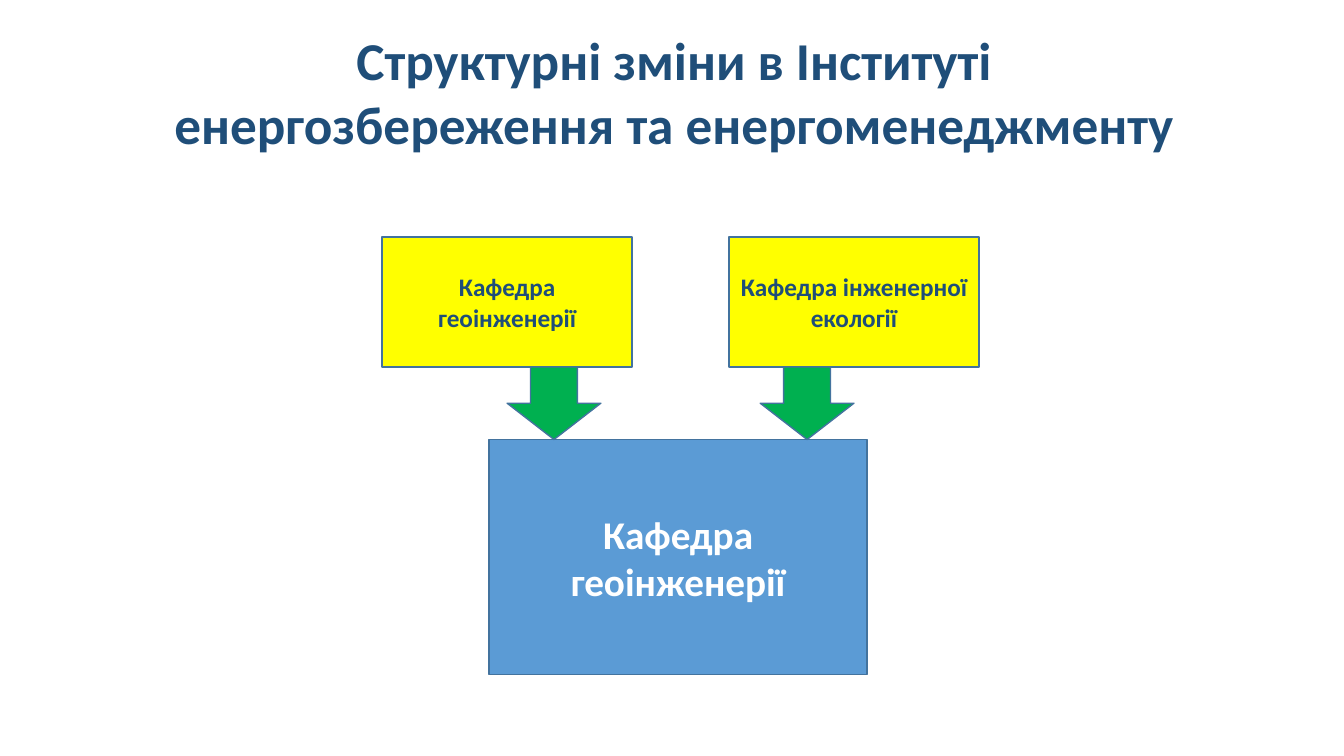
from pptx import Presentation
from pptx.dml.color import RGBColor
from pptx.enum.shapes import MSO_SHAPE
from pptx.enum.text import MSO_ANCHOR, MSO_AUTO_SIZE, PP_ALIGN
from pptx.util import Inches, Pt

# Content
TITLE = ["Структурні зміни в Інституті", "енергозбереження та енергоменеджменту"]
# Each source department: name, box left, arrow left
SOURCES = [
    ("Кафедра геоінженерії", 3.79, 5.03),
    ("Кафедра інженерної екології", 7.23, 7.54),
]
MERGED = "Кафедра геоінженерії"

COLORS = {
    "navy": "1F4E79",
    "outline": "43739E",
    "source": "FFFF00",
    "merged": "5B9BD5",
    "arrow": "00B050",
    "white": "FFFFFF",
}
FONT = "Calibri"

# Rows of the diagram, in inches
SOURCE_TOP, SOURCE_WIDTH, SOURCE_HEIGHT = 2.35, 2.48, 1.29
ARROW_TOP = SOURCE_TOP + SOURCE_HEIGHT
ARROW_WIDTH, ARROW_HEIGHT = 0.93, 0.72
MERGED_TOP = ARROW_TOP + ARROW_HEIGHT


def color(name):
    return RGBColor.from_string(COLORS[name])


def style(para, size, color_name):
    para.alignment = PP_ALIGN.CENTER
    para.font.name = FONT
    para.font.size = Pt(size)
    para.font.bold = True
    para.font.color.rgb = color(color_name)


def add_block(page, kind, left, top, width, height, fill):
    block = page.shapes.add_shape(
        kind, Inches(left), Inches(top), Inches(width), Inches(height))
    block.shadow.inherit = False
    block.fill.solid()
    block.fill.fore_color.rgb = color(fill)
    block.line.color.rgb = color("outline")
    block.line.width = Pt(1)
    return block


def add_department(page, name, left, top, width, height, fill, size, ink):
    box = add_block(page, MSO_SHAPE.RECTANGLE, left, top, width, height, fill)
    frame = box.text_frame
    frame.word_wrap = True
    frame.vertical_anchor = MSO_ANCHOR.MIDDLE
    frame.text = name
    style(frame.paragraphs[0], size, ink)


def main():
    deck = Presentation()
    deck.slide_width, deck.slide_height = Inches(13.33), Inches(7.5)
    page = deck.slides.add_slide(deck.slide_layouts[5])

    # Title
    title = page.shapes.title
    title.left, title.top = Inches(0.05), Inches(0.22)
    title.width, title.height = Inches(13.28), Inches(1.38)
    frame = title.text_frame
    frame.text = "\n".join(TITLE)
    frame.word_wrap = True
    frame.auto_size = MSO_AUTO_SIZE.NONE
    frame.vertical_anchor = MSO_ANCHOR.TOP
    for para in frame.paragraphs:
        style(para, 38, "navy")
        para.space_before = Pt(0)

    # Merged department
    add_department(page, MERGED, 4.85, MERGED_TOP, 3.75, 2.33,
                   "merged", 28, "white")

    # Source departments, each with an arrow to the merged one
    for name, box_left, arrow_left in SOURCES:
        add_department(page, name, box_left, SOURCE_TOP, SOURCE_WIDTH,
                       SOURCE_HEIGHT, "source", 18, "navy")
        add_block(page, MSO_SHAPE.DOWN_ARROW, arrow_left, ARROW_TOP,
                  ARROW_WIDTH, ARROW_HEIGHT, "arrow")

    deck.save("out.pptx")


if __name__ == "__main__":
    main()
